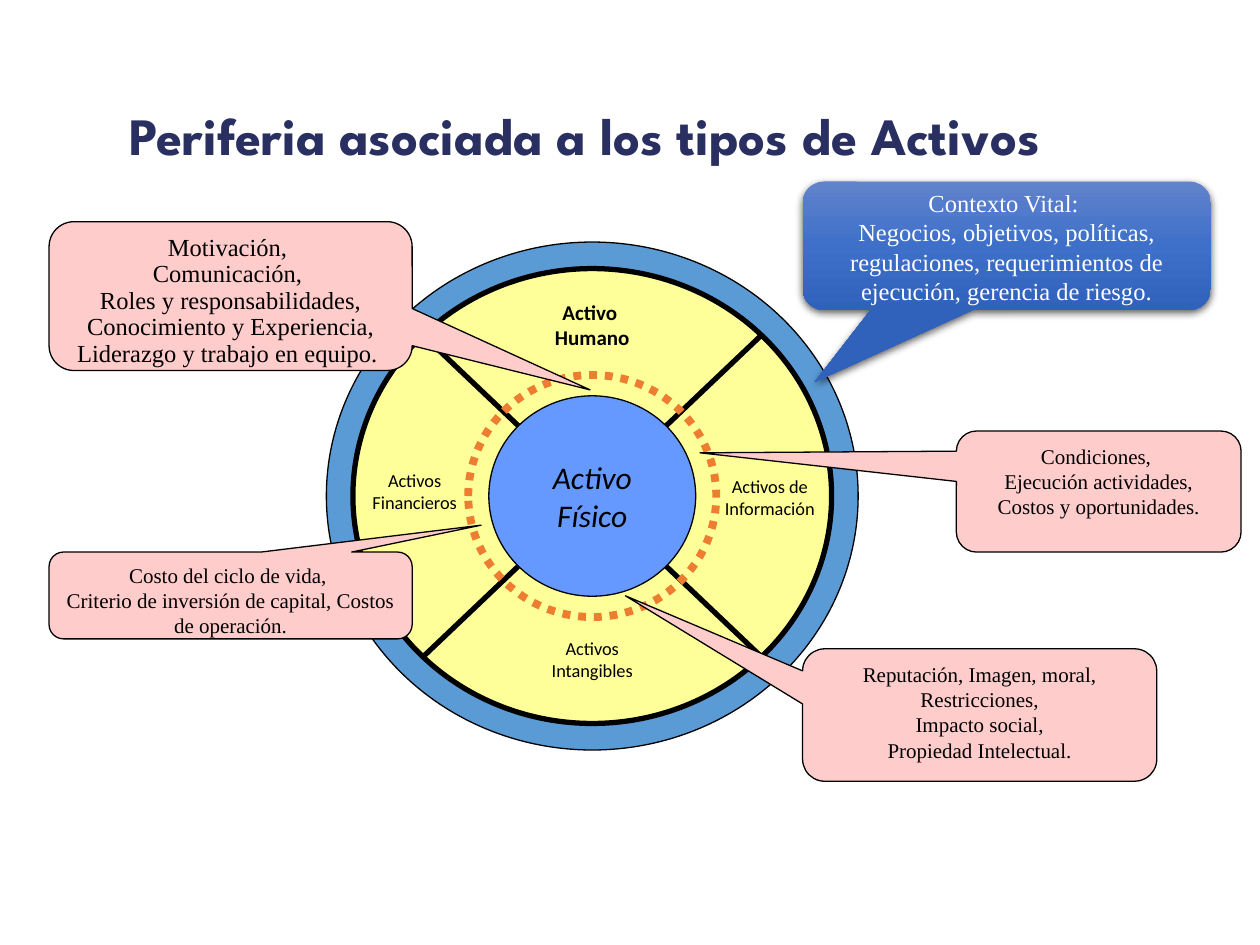
"""Build the slide on the context surrounding each type of asset."""
from copy import deepcopy
from pptx import Presentation
from pptx import util as u
from pptx.dml.color import RGBColor
from pptx.enum import dml, shapes, text
from pptx.oxml import parse_xml
from pptx.oxml.ns import nsdecls, qn

COLORS = {
    "navy": "292F60", "black": "000000", "white": "FFFFFF",
    "rim": "5B9BD5", "ring": "FFFF99", "core": "6699FF",
    "dots": "ED7D31", "pink": "FFCCCC",
    "blue_top": "6183CB", "blue_middle": "3E70CA", "blue_bottom": "3062BB",
}
SERIF = "Times New Roman"
SHAPE = shapes.MSO_SHAPE


def color(name):
    """Return the named colour."""
    return RGBColor.from_string(COLORS[name])


def cm_box(left, top, width, height):
    """Return a box given in centimetres as lengths."""
    return [u.Cm(value) for value in (left, top, width, height)]


def centred(box, dx, dy, width, height):
    """Return a box of the given size, offset from the middle of another."""
    left, top, outer_width, outer_height = box
    return (left + outer_width / 2 + dx - width / 2,
            top + outer_height / 2 + dy - height / 2, width, height)


def write(shape, lines, size, font="Calibri", ink="black", bold=False, italic=False,
          align=text.PP_ALIGN.CENTER, anchor=text.MSO_ANCHOR.TOP, wrap=True, spacing=None):
    """Write one paragraph per line into a shape with the given format."""
    frame = shape.text_frame
    frame.word_wrap = wrap
    frame.auto_size = text.MSO_AUTO_SIZE.NONE
    frame.vertical_anchor = anchor
    for index, line in enumerate(lines):
        para = frame.add_paragraph() if index else frame.paragraphs[0]
        para.alignment = align
        if spacing:
            para.line_spacing = spacing
        span = para.add_run()
        span.text = line
        span.font.name, span.font.size = font, u.Pt(size)
        span.font.bold, span.font.italic = bold, italic
        span.font.color.rgb = color(ink)


def add_figure(page, kind, box, fill=None, line="black", width=0.75):
    """Add a flat preset shape."""
    figure = page.shapes.add_shape(kind, *cm_box(*box))
    figure.shadow.inherit = False
    if fill:
        figure.fill.solid()
        figure.fill.fore_color.rgb = color(fill)
    else:
        figure.fill.background()
    if line:
        figure.line.color.rgb = color(line)
        figure.line.width = u.Pt(width)
    else:
        figure.line.fill.background()
    return figure


def add_title(page, box):
    """Place and format the slide title."""
    title = page.shapes.title
    title.left, title.top, title.width, title.height = cm_box(*box)
    write(title, ["Periferia asociada a los tipos de Activos"], 30, "League Spartan",
          "navy", bold=True, align=text.PP_ALIGN.LEFT,
          anchor=text.MSO_ANCHOR.MIDDLE, spacing=0.9)


def add_wheel(page, box):
    """Draw the concentric wheel of assets with its labels."""
    add_figure(page, SHAPE.OVAL, box, "rim")
    add_figure(page, SHAPE.FLOWCHART_SUMMING_JUNCTION,
               centred(box, 0, 0, 9.65, 9.17), "ring", width=3)
    core = add_figure(page, SHAPE.OVAL, centred(box, 0, 0, 4.17, 4.04), "core")
    write(core, ["Activo", "Físico"], 18, italic=True,
          anchor=text.MSO_ANCHOR.MIDDLE, wrap=False)
    labels = [
        (["Activos", "Financieros"], -3.58, -0.13, 2.34, 10.5, False, False),
        (["Activo ", "Humano"], 0, -3.54, 1.78, 12, True, False),
        (["Activos de Información"], 3.58, 0, 2.54, 10.5, False, True),
        (["Activos", "Intangibles"], 0, 3.27, 2.21, 10.5, False, False),
    ]
    for lines, dx, dy, width, size, bold, wrap in labels:
        label = page.shapes.add_textbox(*cm_box(*centred(box, dx, dy, width, 1.09)))
        write(label, lines, size, bold=bold, wrap=wrap)
    dotted = add_figure(page, SHAPE.OVAL, centred(box, 0, 0, 5, 4.88),
                        line="dots", width=4.5)
    dotted.line.dash_style = dml.MSO_LINE.ROUND_DOT


def add_callout(page, box, tip, lines, size=12, ink="black", spacing=None,
                fill="pink", line="black"):
    """Add a rounded callout whose tip is a share of its size from its middle."""
    callout = add_figure(page, SHAPE.ROUNDED_RECTANGULAR_CALLOUT, box, fill, line)
    callout.adjustments[0], callout.adjustments[1] = tip
    write(callout, lines, size, SERIF, ink, spacing=spacing)
    return callout


def add_context(page, box):
    """Add the shaded callout for the vital context."""
    callout = add_callout(page, box, (-0.47, 1.06), [
        "Contexto Vital: ",
        "Negocios, objetivos, políticas, regulaciones, requerimientos de ejecución, "
        "gerencia de riesgo."], 14, "white", line=None)
    callout.text_frame.margin_top = callout.text_frame.margin_bottom = 0
    callout.fill.gradient()
    callout.fill.gradient_angle = 270
    properties = callout._element.spPr
    stop_list = properties.find(".//" + qn("a:gsLst"))
    stop_list.append(deepcopy(stop_list[0]))
    names = ("blue_top", "blue_middle", "blue_bottom")
    for index, (stop, name) in enumerate(zip(callout.fill.gradient_stops, names)):
        stop.position = index / 2
        stop.color.rgb = color(name)
    properties.find(qn("a:effectLst")).append(parse_xml(
        f'<a:outerShdw {nsdecls("a")} blurRad="{u.Pt(4.5)}" dist="{u.Pt(1.5)}" '
        f'dir="5400000" algn="ctr" rotWithShape="0"><a:srgbClr val="{COLORS["black"]}">'
        '<a:alpha val="63000"/></a:srgbClr></a:outerShdw>'))


def main():
    """Build and save the deck."""
    deck = Presentation()
    deck.slide_width, deck.slide_height = u.Cm(25.4), u.Cm(19.05)
    page = deck.slides.add_slide(deck.slide_layouts[5])
    add_title(page, (2.36, 1.78, 21.77, 2.01))
    add_wheel(page, (6.58, 4.88, 10.72, 10.24))
    add_callout(page, (0.99, 4.47, 7.32, 3), (0.99, 0.63), [
        "Motivación, ", "Comunicación, ",
        "Roles y responsabilidades, Conocimiento y Experiencia, "
        "Liderazgo y trabajo en equipo. "], 14, spacing=0.9)
    add_callout(page, (16.18, 13.08, 7.14, 2.67), (-1, -0.9), [
        "Reputación, Imagen, moral,", "Restricciones,", "Impacto social,",
        "Propiedad Intelectual."])
    add_callout(page, (0.99, 11.13, 7.32, 1.75), (0.69, -0.81), [
        "Costo del ciclo de vida, ",
        "Criterio de inversión de capital, Costos de operación."])
    add_callout(page, (19.28, 8.69, 5.74, 2.44), (-1.4, -0.32), [
        "Condiciones, ", "Ejecución actividades, Costos y oportunidades."])
    add_context(page, (16.18, 3.66, 8.23, 2.59))
    deck.save("out.pptx")


if __name__ == "__main__":
    main()
